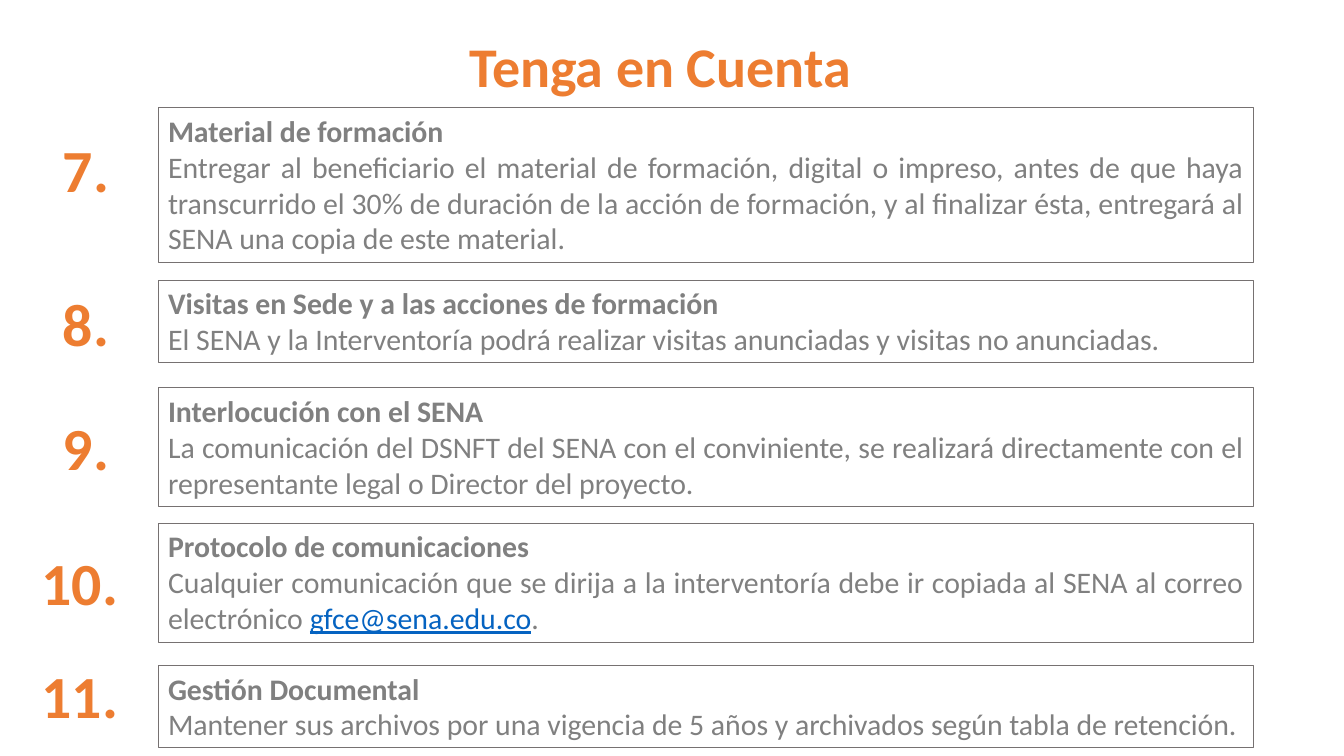
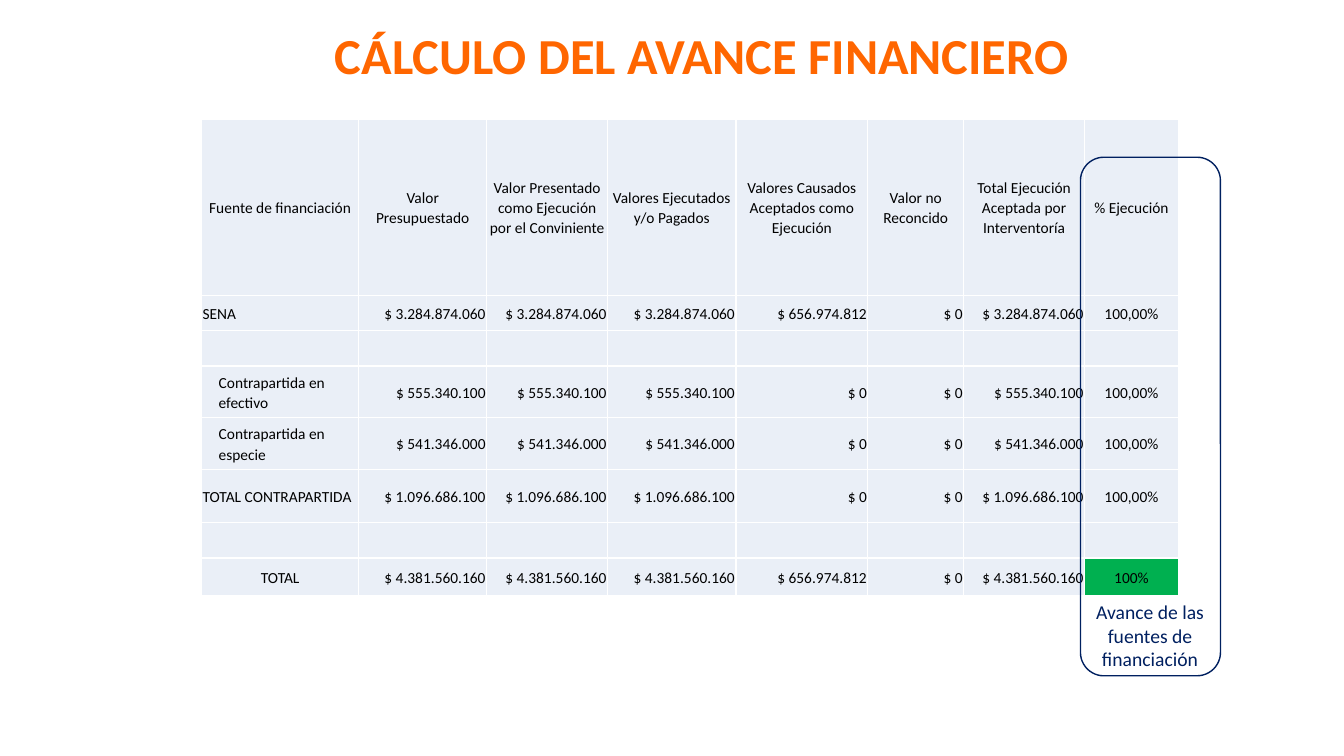
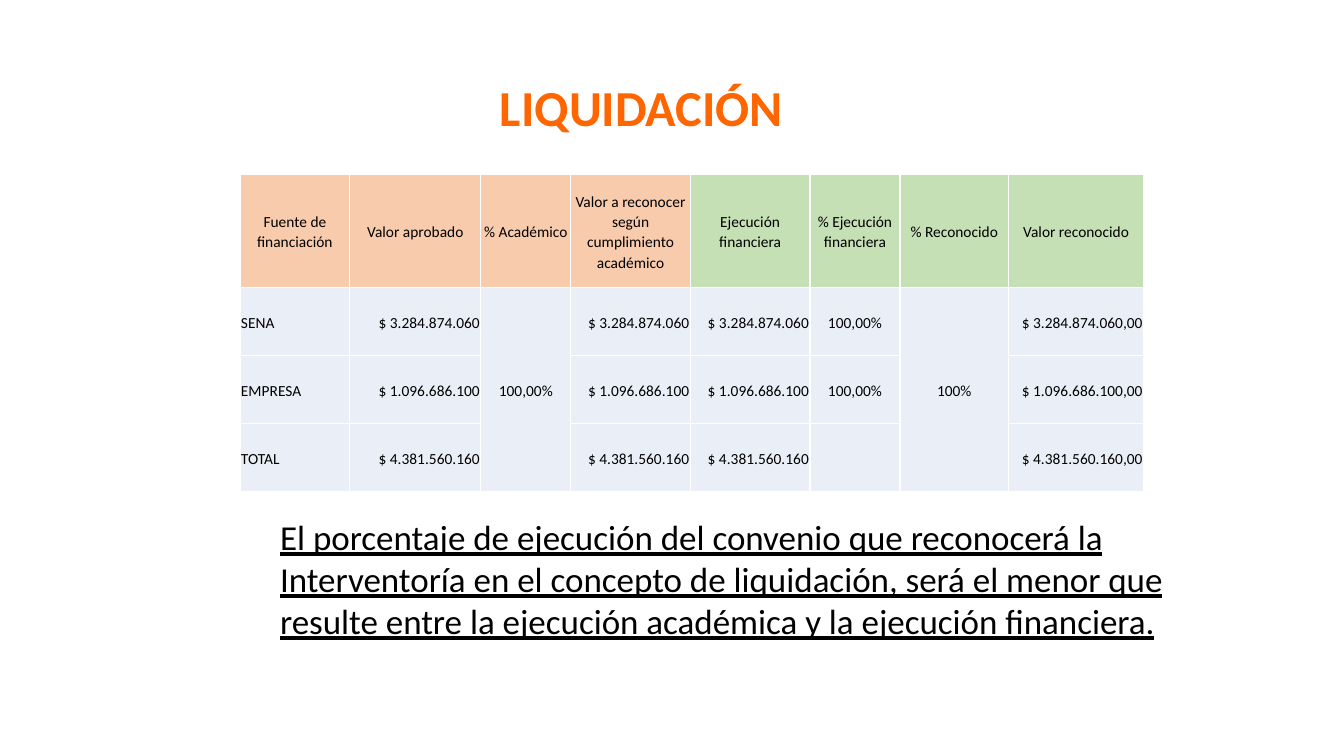
from lxml.etree import SubElement
from pptx import Presentation
from pptx.dml.color import RGBColor
from pptx.enum.shapes import MSO_SHAPE
from pptx.enum.text import MSO_ANCHOR, PP_ALIGN
from pptx.oxml.ns import qn
from pptx.util import Pt

FONT = "Calibri"
COLORS = {
    "orange": "ED7D31", "bright_orange": "FF6600", "gray": "808080", "border": "767171",
    "link": "0563C1", "navy": "002060", "black": "000000", "white": "FFFFFF",
    "pale": "EAEFF7", "peach": "F8CBAD", "light_green": "C5E0B4", "green": "00B050",
}

REMINDER_TITLE = "Tenga en Cuenta"
REMINDER_LEFT, REMINDER_WIDTH, NUMBER_RIGHT = 113, 782.6, 94
REMINDERS = [
    ("7.", 91.5, 77, 110.9, "Material de formación",
     ["Entregar al beneficiario el material de formación, digital o impreso, antes de que haya "
      "transcurrido el 30% de duración de la acción de formación, y al finalizar ésta, "
      "entregará al SENA una copia de este material."]),
    ("8.", 201.5, 200, 59, "Visitas en Sede y a las acciones de formación",
     ["El SENA y la Interventoría podrá realizar visitas anunciadas y visitas no anunciadas."]),
    ("9.", 290, 277, 85, "Interlocución con el SENA",
     ["La comunicación del DSNFT del SENA con el conviniente, se realizará directamente con el "
      "representante legal o Director del proyecto."]),
    ("10.", 386.6, 373.7, 85, "Protocolo de comunicaciones",
     ["Cualquier comunicación que se dirija a la interventoría debe ir copiada al SENA "
      "al correo electrónico ", "gfce@sena.edu.co", "."]),
    ("11.", 467.3, 475.2, 59, "Gestión Documental",
     ["Mantener sus archivos por una vigencia de 5 años y archivados según tabla de retención."]),
]

PROGRESS_TITLE = "CÁLCULO DEL AVANCE FINANCIERO"
PROGRESS_NOTE = "Avance de las fuentes de financiación"
PROGRESS_COLUMNS = [112.3, 91.4, 86.4, 91.6, 94.3, 68.4, 86.4, 67]
PROGRESS_HEIGHTS = [126, 25.2, 25.2, 36.9, 36.9, 38.2, 25.2, 26.6]
PROGRESS_ROWS = [
    ["Fuente de financiación", "Valor Presupuestado",
     "Valor Presentado como Ejecución por el Conviniente", "Valores Ejecutados y/o Pagados",
     "Valores Causados Aceptados como Ejecución", "Valor no Reconcido",
     "Total Ejecución Aceptada por Interventoría", "% Ejecución"],
    ["SENA", "$ 3.284.874.060", "$ 3.284.874.060", "$ 3.284.874.060", "$ 656.974.812",
     "$ 0", "$ 3.284.874.060", "100,00%"],
    [""] * 8,
    ["Contrapartida en efectivo", "$ 555.340.100", "$ 555.340.100", "$ 555.340.100", "$ 0",
     "$ 0", "$ 555.340.100", "100,00%"],
    ["Contrapartida en especie", "$ 541.346.000", "$ 541.346.000", "$ 541.346.000", "$ 0",
     "$ 0", "$ 541.346.000", "100,00%"],
    ["TOTAL CONTRAPARTIDA", "$ 1.096.686.100", "$ 1.096.686.100", "$ 1.096.686.100", "$ 0",
     "$ 0", "$ 1.096.686.100", "100,00%"],
    [""] * 8,
    ["TOTAL", "$ 4.381.560.160", "$ 4.381.560.160", "$ 4.381.560.160", "$ 656.974.812",
     "$ 0", "$ 4.381.560.160", "100%"],
]

SETTLEMENT_TITLE = "LIQUIDACIÓN"
SETTLEMENT_NOTE = (
    "El porcentaje de ejecución del convenio que reconocerá la Interventoría en el concepto de "
    "liquidación, será el menor que resulte entre la ejecución académica y la ejecución financiera."
)
SETTLEMENT_COLUMNS = [78.5, 93.6, 64.3, 85.3, 85.5, 64.3, 77.6, 96.5]
SETTLEMENT_HEIGHTS = [80.6, 48.6, 48.6, 48.6]
SETTLEMENT_MERGED = [2, 6]
SETTLEMENT_ROWS = [
    ["Fuente de financiación", "Valor aprobado", "% Académico",
     "Valor a reconocer según cumplimiento académico", "Ejecución financiera",
     "% Ejecución financiera", "% Reconocido", "Valor reconocido"],
    ["SENA", "$ 3.284.874.060", "100,00%", "$ 3.284.874.060", "$ 3.284.874.060", "100,00%",
     "100%", "$ 3.284.874.060,00"],
    ["EMPRESA", "$ 1.096.686.100", "", "$ 1.096.686.100", "$ 1.096.686.100", "100,00%",
     "", "$ 1.096.686.100,00"],
    ["TOTAL", "$ 4.381.560.160", "", "$ 4.381.560.160", "$ 4.381.560.160", "",
     "", "$ 4.381.560.160,00"],
]


def color(name):
    return RGBColor.from_string(COLORS[name])


def style(paragraph, size, color_name, bold=False, underline=False):
    for span in paragraph.runs:
        span.font.name = FONT
        span.font.size = Pt(size)
        span.font.bold = bold
        span.font.underline = underline
        span.font.color.rgb = color(color_name)


def add_text(page, text, area, size, color_name, align=PP_ALIGN.LEFT,
             anchor=MSO_ANCHOR.TOP, bold=False, underline=False):
    box = page.shapes.add_textbox(*map(Pt, area))
    frame = box.text_frame
    frame.word_wrap = True
    frame.vertical_anchor = anchor
    frame.text = text
    para = frame.paragraphs[0]
    para.alignment = align
    style(para, size, color_name, bold, underline)
    return box


def add_title(page, text, area, size=36, color_name="bright_orange"):
    frame = add_text(page, text, area, size, color_name, PP_ALIGN.CENTER,
                     MSO_ANCHOR.MIDDLE, bold=True).text_frame
    frame.margin_left = frame.margin_right = frame.margin_top = frame.margin_bottom = 0


def add_outline(page, preset, area, line_color, line_width):
    shape = page.shapes.add_shape(preset, *map(Pt, area))
    shape.shadow.inherit = False
    shape.fill.background()
    shape.line.color.rgb = color(line_color)
    shape.line.width = Pt(line_width)
    return shape


def add_reminder(page, number, number_top, top, height, heading, parts):
    shape = add_outline(page, MSO_SHAPE.RECTANGLE,
                        (REMINDER_LEFT, top, REMINDER_WIDTH, height), "border", 0.75)
    frame = shape.text_frame
    frame.word_wrap = True
    frame.vertical_anchor = MSO_ANCHOR.TOP
    frame.text = heading
    body = frame.add_paragraph()
    for part in parts:
        body.add_run().text = part
    for para in frame.paragraphs:
        para.alignment = PP_ALIGN.JUSTIFY
        style(para, 21.3, "gray", bold=para is not body and para.text == heading)
    for span in body.runs:
        if "@" in span.text:
            span.font.color.rgb = color("link")
            span.font.underline = True
    width = 56.2 if len(number) == 2 else 71.3
    add_text(page, number, (NUMBER_RIGHT - width, number_top, width, 59), 42.7,
             "orange", bold=True)


def add_borders(cell):
    properties = cell._tc.get_or_add_tcPr()
    for position, side in enumerate(("lnL", "lnR", "lnT", "lnB")):
        line = SubElement(properties, qn("a:" + side), w=str(Pt(1)))
        properties.insert(position, line)
        fill = SubElement(line, qn("a:solidFill"))
        SubElement(fill, qn("a:srgbClr"), val=COLORS["white"])


def cell_alignment(text, is_header):
    if is_header or text.endswith("%"):
        return PP_ALIGN.CENTER
    return PP_ALIGN.RIGHT if text.startswith("$") else PP_ALIGN.LEFT


def add_grid(page, left, top, widths, heights, rows, header_fills):
    frame = page.shapes.add_table(len(rows), len(widths), Pt(left), Pt(top),
                                  Pt(sum(widths)), Pt(sum(heights)))
    table = frame.table
    table.first_row = table.horz_banding = False
    for column, width in zip(table.columns, widths):
        column.width = Pt(width)
    for row, height in zip(table.rows, heights):
        row.height = Pt(height)
    for row_index, values in enumerate(rows):
        for column_index, text in enumerate(values):
            cell = table.cell(row_index, column_index)
            cell.margin_left = Pt(12.2 if text.startswith("Contrapartida") else 0.72)
            cell.margin_right = cell.margin_top = Pt(0.72)
            cell.margin_bottom = 0
            cell.vertical_anchor = MSO_ANCHOR.MIDDLE
            cell.fill.solid()
            fill = "pale" if row_index else header_fills[column_index]
            cell.fill.fore_color.rgb = color(fill)
            add_borders(cell)
            cell.text_frame.text = text
            para = cell.text_frame.paragraphs[0]
            para.alignment = cell_alignment(text, row_index == 0)
            para.line_spacing = 1.07
            style(para, 11, "black")
    return table


def build_reminders(page):
    add_title(page, REMINDER_TITLE, (326.5, 18.7, 290, 55.4), 40, "orange")
    for reminder in REMINDERS:
        add_reminder(page, *reminder)


def build_progress(page):
    add_title(page, PROGRESS_TITLE, (224.6, 16.6, 553.7, 44))
    table = add_grid(page, 144, 85, PROGRESS_COLUMNS, PROGRESS_HEIGHTS, PROGRESS_ROWS,
                     ["pale"] * 8)
    last = len(PROGRESS_ROWS) - 1
    table.cell(last, 0).text_frame.paragraphs[0].alignment = PP_ALIGN.CENTER
    table.cell(last, 7).fill.fore_color.rgb = color("green")
    add_outline(page, MSO_SHAPE.ROUNDED_RECTANGLE, (771.8, 112.3, 100, 370.4), "navy", 1)
    add_text(page, PROGRESS_NOTE, (769, 425, 105, 58), 14, "navy", PP_ALIGN.CENTER)


def build_settlement(page):
    add_text(page, SETTLEMENT_NOTE, (193, 365, 657.4, 96.5), 25, "black",
             anchor=MSO_ANCHOR.MIDDLE, underline=True)
    table = add_grid(page, 171.4, 124.8, SETTLEMENT_COLUMNS, SETTLEMENT_HEIGHTS,
                     SETTLEMENT_ROWS, ["peach"] * 4 + ["light_green"] * 4)
    for column in SETTLEMENT_MERGED:
        table.cell(1, column).merge(table.cell(3, column))
    add_title(page, SETTLEMENT_TITLE, (4.3, 54, 908, 44))


def main():
    deck = Presentation()
    deck.slide_width, deck.slide_height = Pt(960), Pt(540)
    for build in (build_reminders, build_progress, build_settlement):
        build(deck.slides.add_slide(deck.slide_layouts[6]))
    deck.save("out.pptx")


if __name__ == "__main__":
    main()
